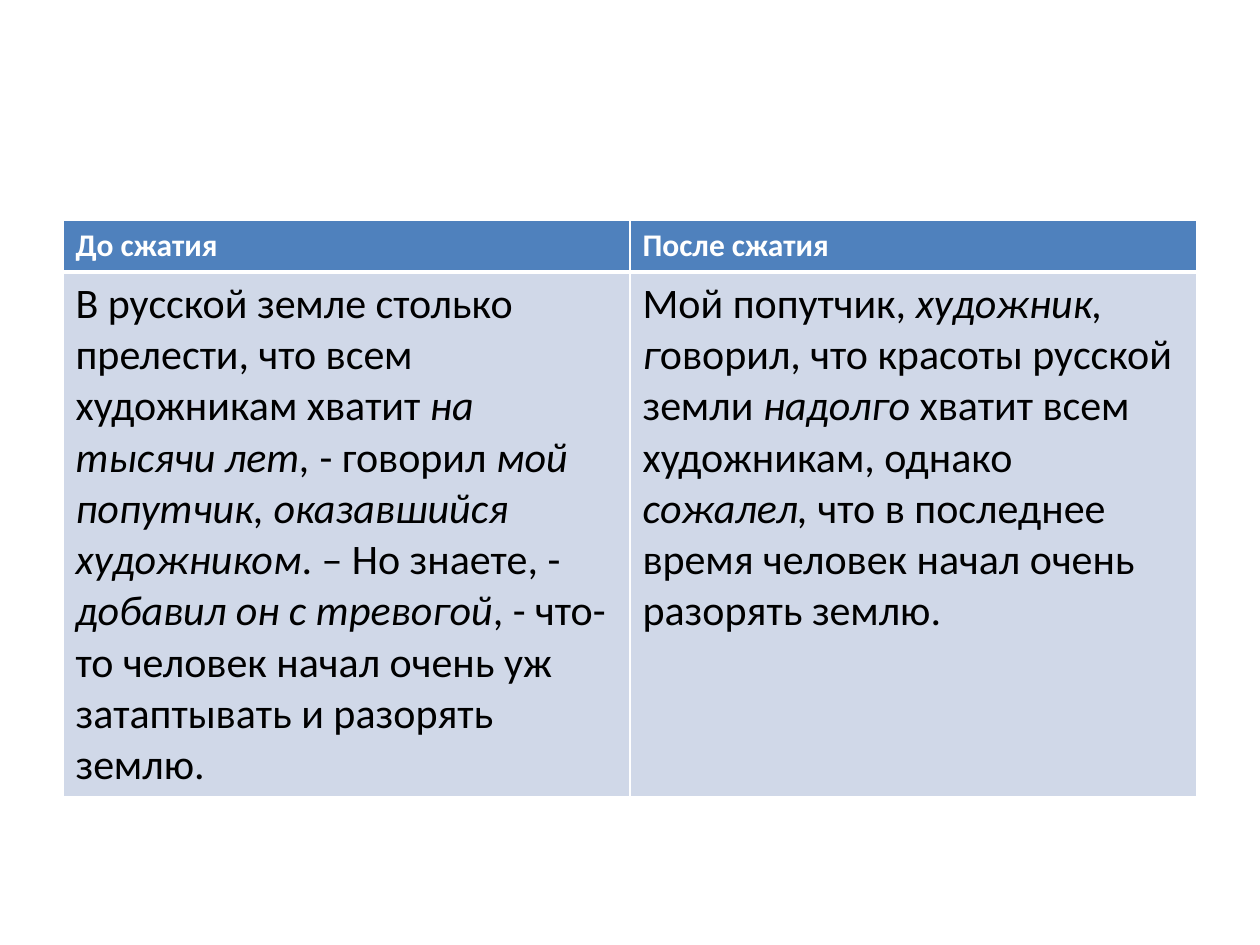
"""Build a slide with a two-column table comparing a text before and after condensing."""
import pptx
import pptx.dml.color
import pptx.enum.text
import pptx.oxml
import pptx.oxml.ns
import pptx.util

Inches, Pt = pptx.util.Inches, pptx.util.Pt
RGBColor = pptx.dml.color.RGBColor

WHITE = RGBColor(0xFF, 0xFF, 0xFF)
BLACK = RGBColor(0, 0, 0)
BLUE = RGBColor(0x4F, 0x81, 0xBD)
PALE = RGBColor(0xD0, 0xD8, 0xE8)

HEADERS = [[("До сжатия", False)], [("После сжатия", False)]]
TEXTS = [
    [
        ("В русской земле столько прелести, что всем художникам хватит ", False),
        ("на тысячи лет, ", True),
        ("- говорил ", False),
        ("мой попутчик, оказавшийся художником", True),
        (". – Но знаете, - ", False),
        ("добавил он с тревогой", True),
        (", - что-то человек начал очень уж затаптывать и разорять землю.", False),
    ],
    [
        ("Мой попутчик, ", False),
        ("художник, г", True),
        ("оворил, что красоты русской земли ", False),
        ("надолго", True),
        (" хватит всем художникам, однако ", False),
        ("сожалел,", True),
        (" что в последнее время человек начал очень разорять землю.", False),
    ],
]
ROWS = [
    {"cells": HEADERS, "height": 0.41, "fill": BLUE, "color": WHITE,
     "font": {"name": "Calibri", "size": Pt(18), "bold": True},
     "borders": {"L": 1, "R": 1, "T": 1, "B": 3}},
    {"cells": TEXTS, "height": 4.1, "fill": PALE, "color": BLACK,
     "font": {"name": "Calibri", "size": Pt(24), "bold": False},
     "borders": {"L": 1, "R": 1, "T": 3, "B": 1}},
]
LEFT, TOP, WIDTH = 0.5, 1.75, 9


def set_borders(cell, borders):
    """Draw white borders of the given point widths."""
    tc_pr = cell._tc.get_or_add_tcPr()
    for i, (side, width) in enumerate(borders.items()):
        tc_pr.insert(i, pptx.oxml.parse_xml(
            f'<a:ln{side} {pptx.oxml.ns.nsdecls("a")} w="{Pt(width)}">'
            f'<a:solidFill><a:srgbClr val="{WHITE}"/></a:solidFill></a:ln{side}>'))


def fill_cell(cell, runs, row):
    """Write the runs and format the cell."""
    cell.fill.solid()
    cell.fill.fore_color.rgb = row["fill"]
    set_borders(cell, row["borders"])
    p = cell.text_frame.paragraphs[0]
    p.alignment = pptx.enum.text.PP_ALIGN.LEFT
    for text, italic in runs:
        r = p.add_run()
        r.text = text
        for key, value in {**row["font"], "italic": italic}.items():
            setattr(r.font, key, value)
        r.font.color.rgb = row["color"]


def main():
    prs = pptx.Presentation()
    prs.slide_width, prs.slide_height = Inches(10), Inches(7.5)
    s = prs.slides.add_slide(prs.slide_layouts[6])
    height = sum(row["height"] for row in ROWS)
    table = s.shapes.add_table(len(ROWS), len(HEADERS), Inches(LEFT), Inches(TOP),
                               Inches(WIDTH), Inches(height)).table
    for i, row in enumerate(ROWS):
        table.rows[i].height = Inches(row["height"])
        for j, runs in enumerate(row["cells"]):
            fill_cell(table.cell(i, j), runs, row)
    prs.save("out.pptx")


if __name__ == "__main__":
    main()
